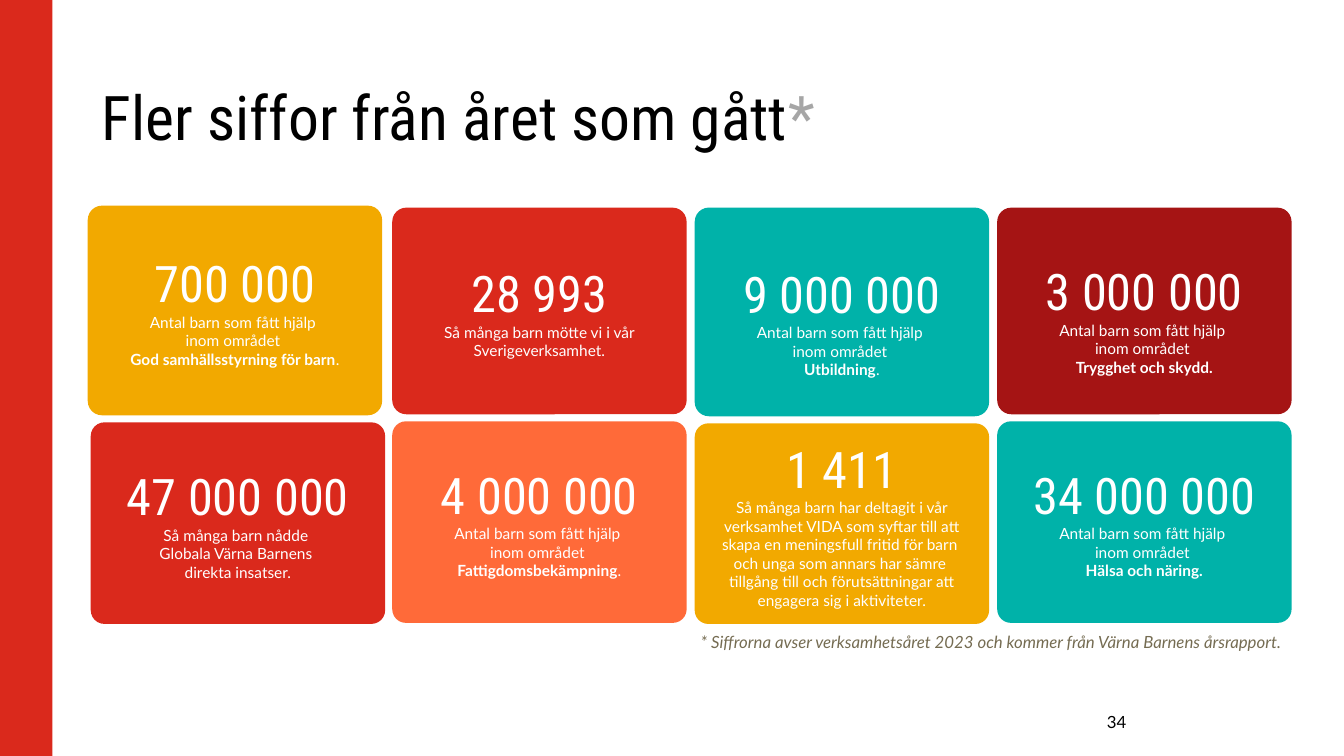
from pptx import Presentation
from pptx.dml.color import RGBColor
from pptx.enum.shapes import MSO_SHAPE as Shape
from pptx.enum.text import MSO_ANCHOR as Anchor, PP_ALIGN as Align
from pptx.util import Inches, Pt

RED, GOLD, TEAL = "DA291C", "F2A900", "00B2A9"
WINE, CORAL, WHITE = "A51414", "FF6A39", "FFFFFF"
HEAD, BODY = "Roboto Condensed", "Lato"
HELP = "Antal barn som fått hjälp \ninom området \n"

TITLE = "Fler siffor från året som gått"
NOTE = "* Siffrorna avser verksamhetsåret 2023 och kommer från Värna Barnens årsrapport."
PAGE = "34"

# number, plain text, bold text, ending, fill, left, top, height, extra top inset
CARDS = [
    ("700 000", HELP, "God samhällsstyrning för barn", ".", GOLD, 0.87, 2.04, 2.08, 0),
    ("28 993", "Så många barn mötte vi i vår Sverigeverksamhet.", "", "",
     RED, 3.89, 2.06, 2.05, 0),
    ("9 000 000", HELP, "Utbildning", ".", TEAL, 6.89, 2.06, 2.07, 0.18),
    ("3 000 000", HELP, "Trygghet och skydd.", "", WINE, 9.89, 2.06, 2.05, 0.15),
    ("47 000 000", "Så många barn nådde \nGlobala Värna Barnens \ndirekta insatser.", "", "",
     RED, 0.9, 4.19, 2, 0),
    ("4 000 000", HELP, "Fattigdomsbekämpning", ".", CORAL, 3.89, 4.18, 2, 0),
    ("1 411", "Så många barn har deltagit i vår verksamhet VIDA som syftar till att "
     "skapa en meningsfull fritid för barn \noch unga som annars har sämre \n"
     "tillgång till och förutsättningar att engagera sig i aktiviteter.", "", "",
     GOLD, 6.89, 4.2, 1.99, 0),
    ("34 000 000", HELP, "Hälsa och näring.", "", TEAL, 9.89, 4.18, 2, 0),
]


def tint(code):
    return RGBColor.from_string(code)


def write(para, text, size=11, font=BODY, color=WHITE, bold=False, italic=False):
    for index, line in enumerate(text.split("\n")):
        if index:
            para.add_line_break()
        if line:
            run = para.add_run()
            run.text = line
            face = run.font
            face.size, face.name = Pt(size), font
            face.bold, face.italic = bold, italic
            face.color.rgb = tint(color)


def block(kind, fill, *box):
    shape = slide.shapes.add_shape(kind, *map(Inches, box))
    shape.shadow.inherit = False
    shape.fill.solid()
    shape.fill.fore_color.rgb = tint(fill)
    shape.line.fill.background()
    return shape


def label(*box, align=Align.LEFT, spacing=1.0):
    frame = slide.shapes.add_textbox(*map(Inches, box)).text_frame
    frame.word_wrap = True
    frame.vertical_anchor = Anchor.MIDDLE
    para = frame.paragraphs[0]
    para.alignment, para.line_spacing = align, spacing
    return para


def card(number, plain, strong, end, fill, left, top, height, drop):
    shape = block(Shape.ROUNDED_RECTANGLE, fill, left, top, 2.92, height)
    shape.adjustments[0] = 0.068
    frame = shape.text_frame
    frame.word_wrap = True
    frame.vertical_anchor = Anchor.MIDDLE
    frame.margin_top = Inches(0.05 + drop)
    first, second = frame.paragraphs[0], frame.add_paragraph()
    first.alignment = second.alignment = Align.CENTER
    write(first, number, size=36, font=HEAD)
    write(second, plain)
    write(second, strong, bold=True)
    write(second, end)


deck = Presentation()
deck.slide_width, deck.slide_height = Inches(13.33), Inches(7.5)
slide = deck.slides.add_slide(deck.slide_layouts[6])

block(Shape.RECTANGLE, RED, 0, 0, 0.52, 7.5)
title = label(0.91, 0.7, 10.42, 0.99, spacing=0.9)
write(title, TITLE, size=44, font=HEAD, color="000000")
write(title, "*", size=44, font=HEAD, color="A6A6A6")
write(label(10.57, 7.06, 0.7, 0.2, align=Align.RIGHT), PAGE, size=12, color="000000")
for entry in CARDS:
    card(*entry)
note = label(2.39, 6.18, 10.42, 0.39, align=Align.RIGHT, spacing=0.9)
write(note, NOTE, size=12, color="756C52", italic=True)

"""Slide with eight key figures from the year."""
deck.save("out.pptx")
